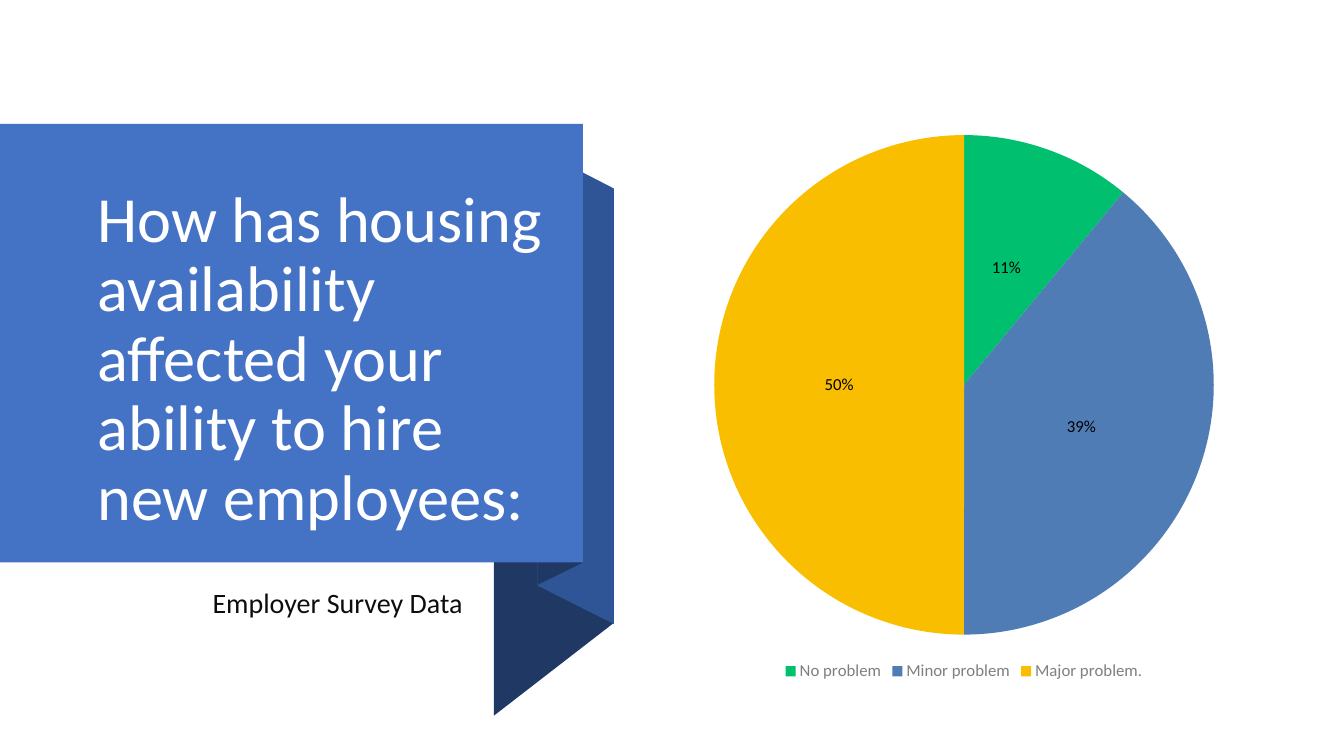
from dataclasses import dataclass

from lxml import etree
from pptx import Presentation
from pptx.chart.chart import Chart
from pptx.chart.data import CategoryChartData
from pptx.dml.color import RGBColor
from pptx.enum.chart import XL_CHART_TYPE, XL_LABEL_POSITION, XL_LEGEND_POSITION
from pptx.enum.shapes import MSO_SHAPE
from pptx.enum.text import MSO_ANCHOR, PP_ALIGN
from pptx.oxml.ns import qn
from pptx.shapes.base import BaseShape
from pptx.slide import Slide
from pptx.util import Pt

PIE = XL_CHART_TYPE.PIE
CENTER = XL_LABEL_POSITION.CENTER
BOTTOM_LEGEND = XL_LEGEND_POSITION.BOTTOM
RECTANGLE = MSO_SHAPE.RECTANGLE
TOP, BOTTOM = MSO_ANCHOR.TOP, MSO_ANCHOR.BOTTOM
LEFT, RIGHT = PP_ALIGN.LEFT, PP_ALIGN.RIGHT


@dataclass(frozen=True)
class Theme:
    font: str = "Calibri"
    banner: str = "4472C4"
    fold: str = "2F5597"
    shade: str = "203864"
    title: str = "FFFFFF"
    caption: str = "0D0D0D"
    label: str = "000000"
    legend: str = "7F7F7F"
    title_size: float = 46
    caption_size: float = 20
    chart_size: float = 18
    label_size: float = 12


@dataclass(frozen=True)
class Box:
    left: float
    top: float
    width: float
    height: float

    def lengths(self) -> tuple[Pt, Pt, Pt, Pt]:
        return Pt(self.left), Pt(self.top), Pt(self.width), Pt(self.height)


@dataclass(frozen=True)
class Fold:
    left: float
    left_top: float
    left_bottom: float
    right: float
    right_top: float
    right_bottom: float
    color: str


@dataclass(frozen=True)
class Answer:
    name: str
    share: float
    color: str


THEME = Theme()
BANNER = Box(0, 88.5, 416.4, 313.3)
TITLE_BOX = Box(62.6, 106.6, 340.6, 278.6)
CAPTION_BOX = Box(62.6, 417.6, 275, 85)
CHART_BOX = Box(480.2, 88.5, 416.9, 401)
PLOT_LAYOUT = {"x": 0.07, "y": 0.02, "w": 0.86, "h": 0.89}

FOLDS = [
    Fold(352.8, 204.5, 511.2, 438.4, 138.2, 445, THEME.shade),
    Fold(384, 106.6, 418.3, 438.4, 134.6, 445.7, THEME.fold),
    Fold(384.4, 105.1, 417.6, 416.4, 89.3, 401.8, THEME.shade),
]
ANSWERS = [
    Answer("No problem", 0.11, "00BF6F"),
    Answer("Minor problem", 0.39, "507CB6"),
    Answer("Major problem.", 0.5, "F9BE00"),
]


def rgb(color: str) -> RGBColor:
    return RGBColor.from_string(color)


def paint(sp: BaseShape, color: str) -> None:
    sp.shadow.inherit = False
    sp.fill.solid()
    sp.fill.fore_color.rgb = rgb(color)
    sp.line.fill.background()


def add_fold(s: Slide, fold: Fold) -> None:
    builder = s.shapes.build_freeform(Pt(fold.right), Pt(fold.right_bottom))
    builder.add_line_segments([
        (Pt(fold.left), Pt(fold.left_bottom)),
        (Pt(fold.left), Pt(fold.left_top)),
        (Pt(fold.right), Pt(fold.right_top)),
    ], close=True)
    paint(builder.convert_to_shape(), fold.color)


def add_text(s: Slide, text: str, box: Box, *, size: float, color: str,
             align: PP_ALIGN = LEFT, anchor: MSO_ANCHOR = TOP,
             before: float = 0) -> None:
    tf = s.shapes.add_textbox(*box.lengths()).text_frame
    tf.word_wrap = True
    tf.vertical_anchor = anchor
    p = tf.paragraphs[0]
    p.alignment = align
    p.line_spacing = 0.9
    p.space_before = Pt(before)
    r = p.add_run()
    r.text = text
    r.font.name = THEME.font
    r.font.size = Pt(size)
    r.font.color.rgb = rgb(color)


def fix_plot_area(chart: Chart, fractions: dict[str, float]) -> None:
    area = chart.element.find(".//" + qn("c:plotArea"))
    for old in area.findall(qn("c:layout")):
        area.remove(old)
    layout = etree.Element(qn("c:layout"))
    manual = etree.SubElement(layout, qn("c:manualLayout"))
    settings = {"layoutTarget": "inner", "xMode": "edge", "yMode": "edge", **fractions}
    for tag, value in settings.items():
        etree.SubElement(manual, qn(f"c:{tag}")).set("val", str(value))
    area.insert(0, layout)


def add_pie(s: Slide, answers: list[Answer], box: Box) -> None:
    data = CategoryChartData(number_format="0%")
    data.categories = [answer.name for answer in answers]
    data.add_series("Series 1", [answer.share for answer in answers])
    chart = s.shapes.add_chart(PIE, *box.lengths(), data).chart
    chart.has_title = False
    chart.font.name = THEME.font
    chart.font.size = Pt(THEME.chart_size)
    chart.font.color.rgb = rgb(THEME.label)

    chart.has_legend = True
    chart.legend.position = BOTTOM_LEGEND
    chart.legend.include_in_layout = False
    chart.legend.font.size = Pt(THEME.label_size)
    chart.legend.font.color.rgb = rgb(THEME.legend)

    plot = chart.plots[0]
    plot.vary_by_categories = True
    series = plot.series[0]
    for index, answer in enumerate(answers):
        fill = series.points[index].format.fill
        fill.solid()
        fill.fore_color.rgb = rgb(answer.color)

    labels = series.data_labels
    labels.show_value = True
    labels.show_percentage = False
    labels.number_format = "0%"
    labels.number_format_is_linked = False
    labels.position = CENTER
    labels.font.size = Pt(THEME.label_size)
    labels.font.color.rgb = rgb(THEME.label)
    fix_plot_area(chart, PLOT_LAYOUT)


def main() -> None:
    prs = Presentation()
    prs.slide_width, prs.slide_height = Pt(960), Pt(540)
    s = prs.slides.add_slide(prs.slide_layouts[6])
    for fold in FOLDS:
        add_fold(s, fold)
    paint(s.shapes.add_shape(RECTANGLE, *BANNER.lengths()), THEME.banner)
    add_text(s, "How has housing availability affected your ability to hire new employees:",
             TITLE_BOX, size=THEME.title_size, color=THEME.title, anchor=BOTTOM)
    add_text(s, "Employer Survey Data", CAPTION_BOX, size=THEME.caption_size,
             color=THEME.caption, align=RIGHT, before=10)
    add_pie(s, ANSWERS, CHART_BOX)
    prs.save("out.pptx")


if __name__ == "__main__":
    main()
